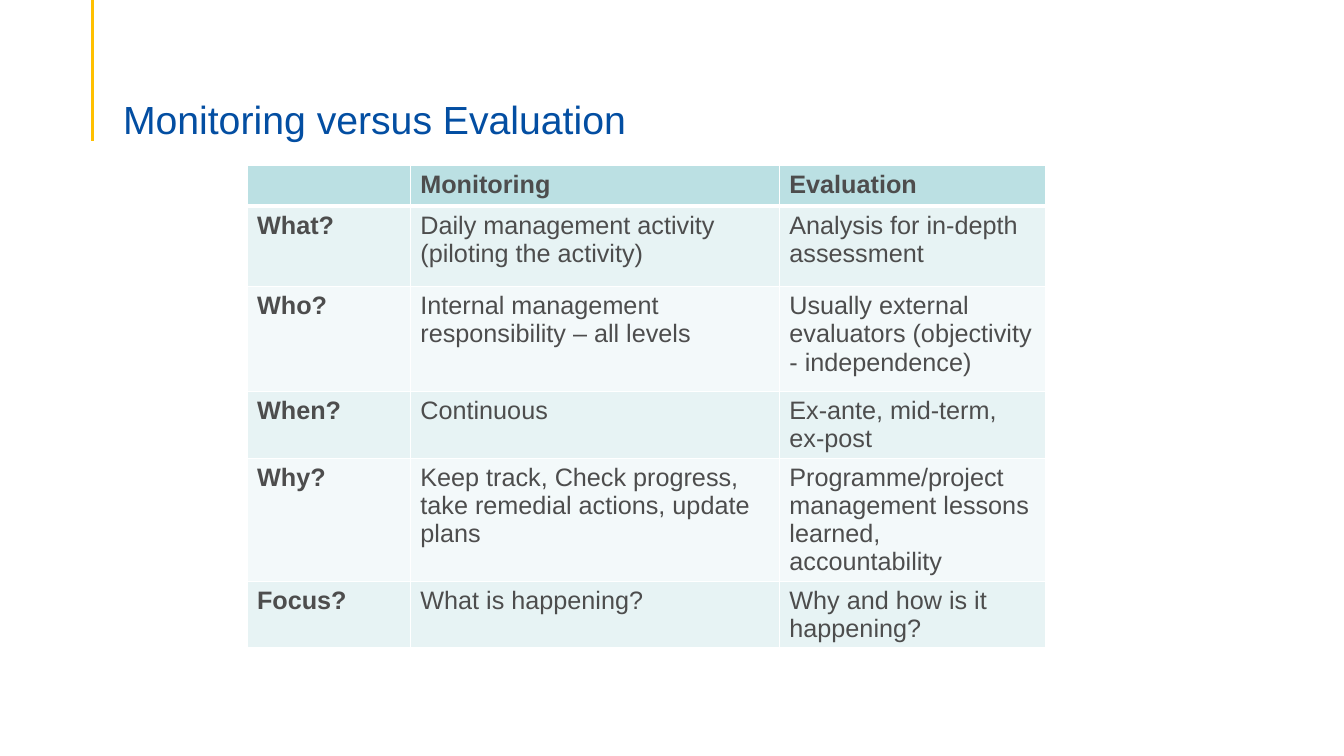
from lxml import etree
from pptx import Presentation
from pptx.dml.color import RGBColor
from pptx.enum.shapes import MSO_CONNECTOR
from pptx.enum.text import MSO_ANCHOR, MSO_AUTO_SIZE, PP_ALIGN
from pptx.oxml.ns import qn
from pptx.util import Inches, Pt

STRAIGHT = MSO_CONNECTOR.STRAIGHT
BOTTOM = MSO_ANCHOR.BOTTOM
LEFT = PP_ALIGN.LEFT
NO_FIT = MSO_AUTO_SIZE.NONE

COLORS = {"accent": "FFC000", "title": "034EA2", "text": "4D4D4D", "header": "BBE0E3",
          "odd": "E7F3F4", "even": "F3F9FA", "border": "FFFFFF"}
COL_WIDTHS = [1.62, 3.66, 2.64]
ROW_HEIGHTS = [0.37, 0.8, 1.04, 0.65, 1.04, 0.65]
ROWS = [
    ["", "Monitoring", "Evaluation"],
    ["What?", "Daily management activity (piloting the activity)",
     "Analysis for in-depth assessment"],
    ["Who?", "Internal management responsibility – all levels",
     "Usually external evaluators (objectivity - independence)"],
    ["When?", "Continuous", "Ex-ante, mid-term, ex-post"],
    ["Why?", "Keep track, Check progress, take remedial actions, update plans",
     "Programme/project management lessons learned, accountability"],
    ["Focus?", "What is happening?", "Why and how is it happening?"],
]


def rgb(name):
    return RGBColor.from_string(COLORS[name])


def add_border(cell, side, width):
    ln = etree.SubElement(cell._tc.get_or_add_tcPr(), qn(f"a:ln{side}"), w=str(Pt(width)))
    fill = etree.SubElement(ln, qn("a:solidFill"))
    etree.SubElement(fill, qn("a:srgbClr"), val=COLORS["border"])


prs = Presentation()
prs.slide_width, prs.slide_height = Inches(13.33), Inches(7.5)
s = prs.slides.add_slide(prs.slide_layouts[5])

# Accent line
line = s.shapes.add_connector(STRAIGHT, Inches(0.92), 0, Inches(0.92), Inches(1.4))
line.line.color.rgb = rgb("accent")
line.line.width = Pt(2.25)
etree.SubElement(line._element.spPr, qn("a:effectLst"))

# Title
title = s.shapes.title
title.left, title.top, title.width, title.height = map(Inches, (1.12, 0.56, 11.5, 0.86))
tf = title.text_frame
frame_format = {"word_wrap": True, "auto_size": NO_FIT, "vertical_anchor": BOTTOM,
                "margin_left": Inches(0.1), "margin_top": Inches(0.05),
                "margin_right": Inches(0.1), "margin_bottom": 0}
for name, value in frame_format.items():
    setattr(tf, name, value)
p = tf.paragraphs[0]
p.alignment = LEFT
p.line_spacing = 0.9
r = p.add_run()
r.text = "Monitoring versus Evaluation"
r.font.name, r.font.size = "Arial", Pt(28)
r.font.color.rgb = rgb("title")

# Comparison table
table = s.shapes.add_table(len(ROWS), len(COL_WIDTHS), Inches(2.45), Inches(1.64),
                           Inches(sum(COL_WIDTHS)), Inches(sum(ROW_HEIGHTS))).table
for column, width in zip(table.columns, COL_WIDTHS):
    column.width = Inches(width)
for i, (row, height) in enumerate(zip(ROWS, ROW_HEIGHTS)):
    table.rows[i].height = Inches(height)
    band = "header" if i == 0 else "odd" if i % 2 else "even"
    for j, text in enumerate(row):
        cell = table.cell(i, j)
        widths = {"L": 1, "R": 1, "T": 3 if i == 1 else 1, "B": 3 if i == 0 else 1}
        for side, width in widths.items():
            add_border(cell, side, width)
        cell.fill.solid()
        cell.fill.fore_color.rgb = rgb(band)
        if text:
            r = cell.text_frame.paragraphs[0].add_run()
            r.text = text
            r.font.name, r.font.size = "Arial", Pt(18)
            r.font.bold = i == 0 or j == 0
            r.font.color.rgb = rgb("text")

prs.save("out.pptx")
